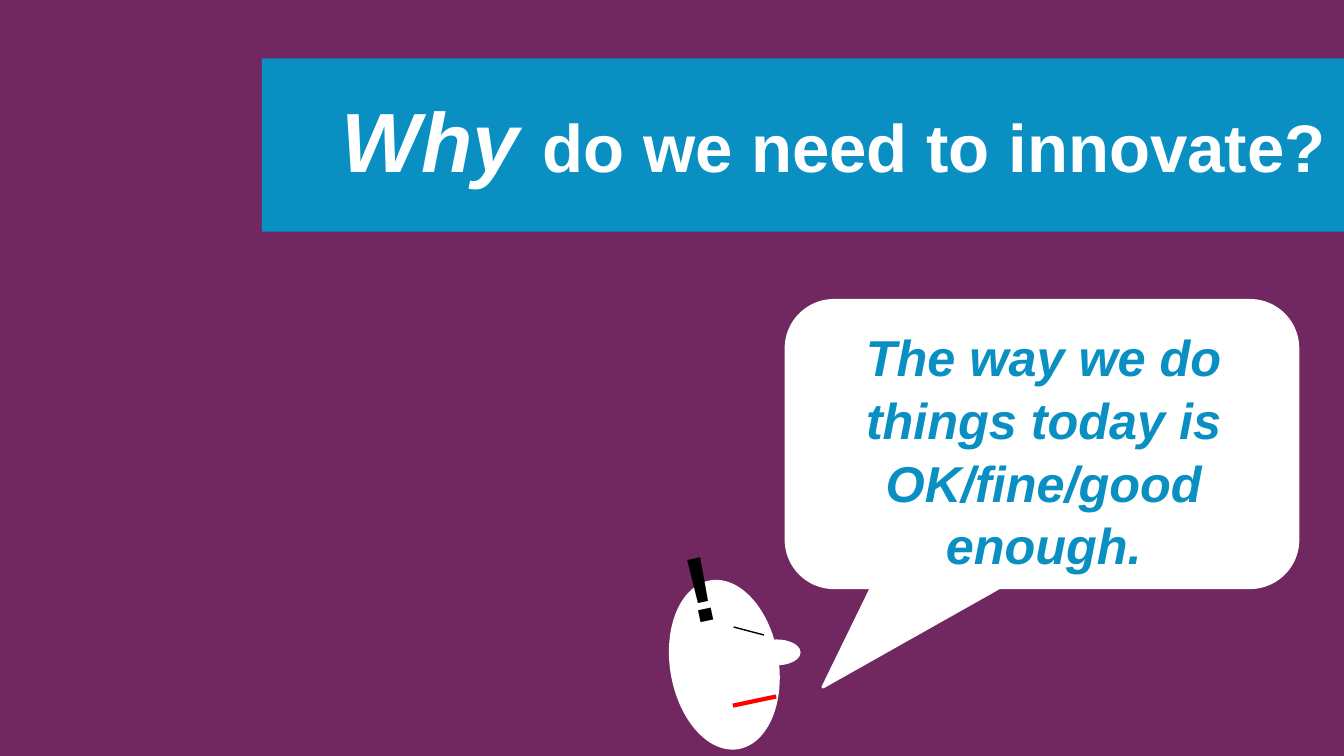
import pptx
import pptx.util
import pptx.dml.color
import pptx.enum.shapes
import pptx.enum.text
import pptx.oxml

Cm = pptx.util.Cm
Pt = pptx.util.Pt
RGBColor = pptx.dml.color.RGBColor
Shape = pptx.enum.shapes.MSO_SHAPE
Align = pptx.enum.text.PP_ALIGN

PURPLE = RGBColor(0x71, 0x27, 0x5F)
BLUE = RGBColor(0x0A, 0x8F, 0xC2)
WHITE = RGBColor(0xFF, 0xFF, 0xFF)
BLACK = RGBColor(0x00, 0x00, 0x00)
RED = RGBColor(0xFF, 0x00, 0x00)

FONT = "Arial"
LINE_SPACING = 1.04

BUBBLE = (Shape.ROUNDED_RECTANGULAR_CALLOUT, (19.81, 7.57, 12.9, 7.24), 0, WHITE, WHITE)
BUBBLE_TAIL = (-0.428, 0.846, 0.167)
HEAD = (Shape.OVAL, (16.92, 14.63, 2.67, 4.24), 350.6, WHITE, WHITE)
NOSE = (Shape.OVAL, (19, 16.15, 1.14, 0.58), 0, WHITE, WHITE)
TITLE_BAND = (Shape.RECTANGLE, (6.6, 1.47, 27.28, 4.37), 0, BLUE, None)
TITLE_BOX = (Shape.RECTANGLE, (7.7, 2.01, 25.98, 2.82), 0, BLUE, None)

MOUTH = ((18.47, 17.78), (19.56, 17.55), RED, 3)
EYE = ((18.49, 15.8), (19.25, 16), BLACK, 1)

SPEECH_BOX = (19.56, 8.03, 13.49, 4.88)
SPEECH = [("The way we do things today is OK/fine/good enough.",
           {"size": Pt(36), "italic": True}, BLUE)]
MARK_BOX = (16.97, 13.06, 1.73, 3.07)
MARK = [("!", {"size": Pt(66), "italic": False}, BLACK)]
TITLE = [("Why ", {"size": Pt(60), "italic": True}, WHITE),
         ("do we need to innovate?", {"size": Pt(48), "italic": False}, WHITE)]


def add_figure(slide, kind, box, rotation, fill, outline):
    shape = slide.shapes.add_shape(kind, *map(Cm, box))
    shape.shadow.inherit = False
    shape.rotation = rotation
    shape.fill.solid()
    shape.fill.fore_color.rgb = fill
    if outline is None:
        shape.line.fill.background()
    else:
        shape.line.color.rgb = outline
        shape.line.width = Pt(2)
    return shape


def add_stroke(slide, start, end, color, width):
    connector = slide.shapes.add_connector(
        pptx.enum.shapes.MSO_CONNECTOR.STRAIGHT, *map(Cm, start + end))
    connector.line.color.rgb = color
    connector.line.width = Pt(width)
    connector._element.spPr.append(pptx.oxml.parse_xml(
        '<a:effectLst xmlns:a="http://schemas.openxmlformats.org/drawingml/2006/main"/>'))


def write(shape, runs, alignment):
    frame = shape.text_frame
    frame.word_wrap = True
    frame.auto_size = pptx.enum.text.MSO_AUTO_SIZE.SHAPE_TO_FIT_TEXT
    frame.vertical_anchor = pptx.enum.text.MSO_ANCHOR.TOP
    paragraph = frame.paragraphs[0]
    paragraph.alignment = alignment
    paragraph.line_spacing = LINE_SPACING
    for text, style, color in runs:
        run = paragraph.add_run()
        run.text = text
        for name, value in {"name": FONT, "bold": True, **style}.items():
            setattr(run.font, name, value)
        run.font.color.rgb = color


def main():
    presentation = pptx.Presentation()
    presentation.slide_width = Cm(33.87)
    presentation.slide_height = Cm(19.05)
    slide = presentation.slides.add_slide(presentation.slide_layouts[6])
    slide.background.fill.solid()
    slide.background.fill.fore_color.rgb = PURPLE

    bubble = add_figure(slide, *BUBBLE)
    for index, value in enumerate(BUBBLE_TAIL):
        bubble.adjustments[index] = value
    speech = slide.shapes.add_textbox(*map(Cm, SPEECH_BOX))
    write(speech, SPEECH, Align.CENTER)

    for figure in (HEAD, NOSE):
        add_figure(slide, *figure)
    for stroke in (MOUTH, EYE):
        add_stroke(slide, *stroke)
    mark = slide.shapes.add_textbox(*map(Cm, MARK_BOX))
    mark.rotation = 347.9
    write(mark, MARK, Align.LEFT)

    add_figure(slide, *TITLE_BAND)
    write(add_figure(slide, *TITLE_BOX), TITLE, Align.RIGHT)

    presentation.save("out.pptx")


if __name__ == "__main__":
    main()
